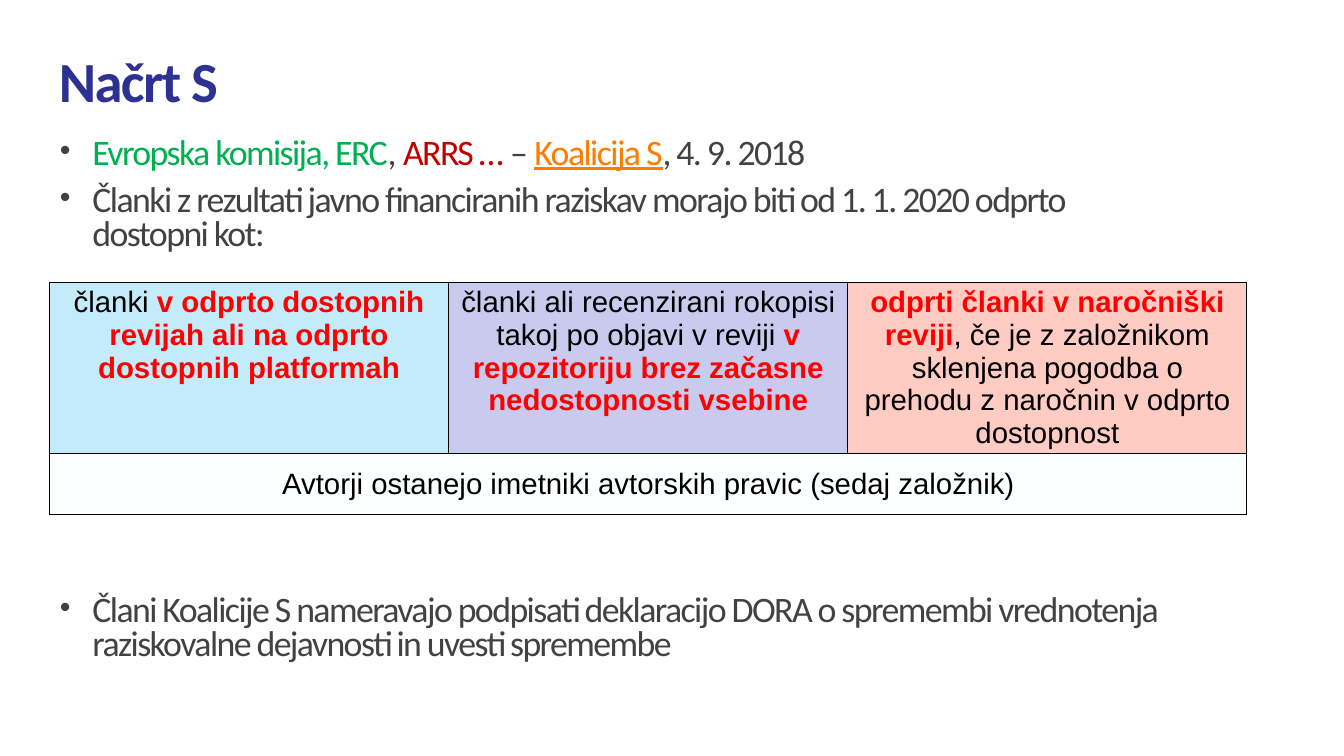
import pptx
import pptx.enum.text
import pptx.oxml
import pptx.oxml.ns
import pptx.util
from pptx.util import Pt

GREY, RED, BLACK = "424242", "FF0000", "000000"
A_NS = pptx.oxml.ns.nsdecls("a")
MIDDLE = pptx.enum.text.MSO_ANCHOR.MIDDLE


def rgb(code):
    return pptx.dml.color.RGBColor.from_string(code)


def add_spans(para, spans, spacing=0):
    """Add (text, colour, bold) spans with letter spacing in hundredths of a point."""
    for text, colour, bold in spans:
        span = para.add_run()
        span.text = text
        span.font.color.rgb = rgb(colour)
        span.font.bold = bold
        if spacing:
            span.font._element.set("spc", str(spacing))


deck = pptx.Presentation()
deck.slide_width, deck.slide_height = Pt(1280), Pt(720)
page = deck.slides.add_slide(deck.slide_layouts[1])

# Title and list
title, body = page.shapes.title, page.placeholders[1]
for box, left, top, width, height, inset in (
    (title, 56, 31, 1066, 90, 0),
    (body, 57, 116.6, 1064, 536, 14.4),
):
    box.left, box.top, box.width, box.height = Pt(left), Pt(top), Pt(width), Pt(height)
    frame = box.text_frame
    frame.auto_size = pptx.enum.text.MSO_AUTO_SIZE.NONE
    frame.word_wrap = True
    frame.margin_left = frame.margin_right = frame.margin_bottom = 0
    frame.margin_top = Pt(inset)

title.text_frame.vertical_anchor = MIDDLE
para = title.text_frame.paragraphs[0]
para.alignment = pptx.enum.text.PP_ALIGN.LEFT
para.font.name, para.font.size = "Calibri", Pt(54)
add_spans(para, [("Načrt S", "2D3292", True)], -150)

# The last bullet stands below the table
bullets = [
    (0, [
        ("Evropska komisija, ERC", "00B050", False),
        (", ", GREY, False),
        ("ARRS … ", "C00000", False),
        ("– ", GREY, False),
        ("Koalicija S", "FF7C00", False),
        (", 4. 9. 2018", GREY, False),
    ]),
    (12, [("Članki z rezultati javno financiranih raziskav morajo biti "
           "od 1. 1. 2020 odprto dostopni kot:", GREY, False)]),
    (325, [("Člani Koalicije S nameravajo podpisati deklaracijo DORA o spremembi "
            "vrednotenja raziskovalne dejavnosti in uvesti spremembe", GREY, False)]),
]
frame = body.text_frame
for index, (space, spans) in enumerate(bullets):
    para = frame.add_paragraph() if index else frame.paragraphs[0]
    para.line_spacing = 0.8
    para.space_before = Pt(space)
    props = para._p.get_or_add_pPr()
    props.set("marL", str(Pt(31)))
    props.set("indent", str(Pt(-31)))
    for xml in (
        f'<a:buClr {A_NS}><a:srgbClr val="{GREY}"/></a:buClr>',
        f'<a:buSzPct {A_NS} val="85000"/>',
        f'<a:buFont {A_NS} typeface="Arial"/>',
        f'<a:buChar {A_NS} char="•"/>',
    ):
        props.append(pptx.oxml.parse_xml(xml))
    para.font.name, para.font.size = "Calibri", Pt(34.1)
    add_spans(para, spans, -150)
frame.paragraphs[0].runs[4].font.underline = True

# Table of the three routes
table = page.shapes.add_table(2, 3, Pt(47), Pt(268.8), Pt(1140.6), Pt(216)).table
for column in table.columns:
    column.width = Pt(380.2)
table.rows[0].height, table.rows[1].height = Pt(157.7), Pt(58.3)
table.cell(1, 0).merge(table.cell(1, 2))
table.cell(1, 0).vertical_anchor = MIDDLE

contents = [
    (0, 0, "C3EBFA", [
        ("članki ", BLACK, False),
        ("v odprto dostopnih revijah ali na odprto dostopnih platformah", RED, True),
    ]),
    (0, 1, "C9CBEE", [
        ("članki ali recenzirani rokopisi takoj po objavi v reviji ", BLACK, False),
        ("v repozitoriju brez začasne nedostopnosti vsebine", RED, True),
    ]),
    (0, 2, "FFCCC4", [
        ("odprti članki v naročniški reviji", RED, True),
        (", če je z založnikom sklenjena pogodba o prehodu z naročnin "
         "v odprto dostopnost", BLACK, False),
    ]),
    (1, 0, "FEFFFF", [
        ("Avtorji ostanejo imetniki avtorskih pravic (sedaj založnik)", BLACK, False),
    ]),
    (1, 1, "FEFFFF", []),
    (1, 2, "FEFFFF", []),
]
for row, column, fill, spans in contents:
    cell = table.cell(row, column)
    cell.fill.solid()
    cell.fill.fore_color.rgb = rgb(fill)
    para = cell.text_frame.paragraphs[0]
    para.alignment = pptx.enum.text.PP_ALIGN.CENTER
    para.font.name, para.font.size = "Arial", Pt(28)
    add_spans(para, spans)
    for place, side in enumerate(("lnL", "lnR", "lnT", "lnB")):
        border = pptx.oxml.parse_xml(
            f'<a:{side} {A_NS} w="{Pt(1)}"><a:solidFill>'
            f'<a:srgbClr val="{BLACK}"/></a:solidFill></a:{side}>')
        cell._tc.get_or_add_tcPr().insert(place, border)

deck.save("out.pptx")
